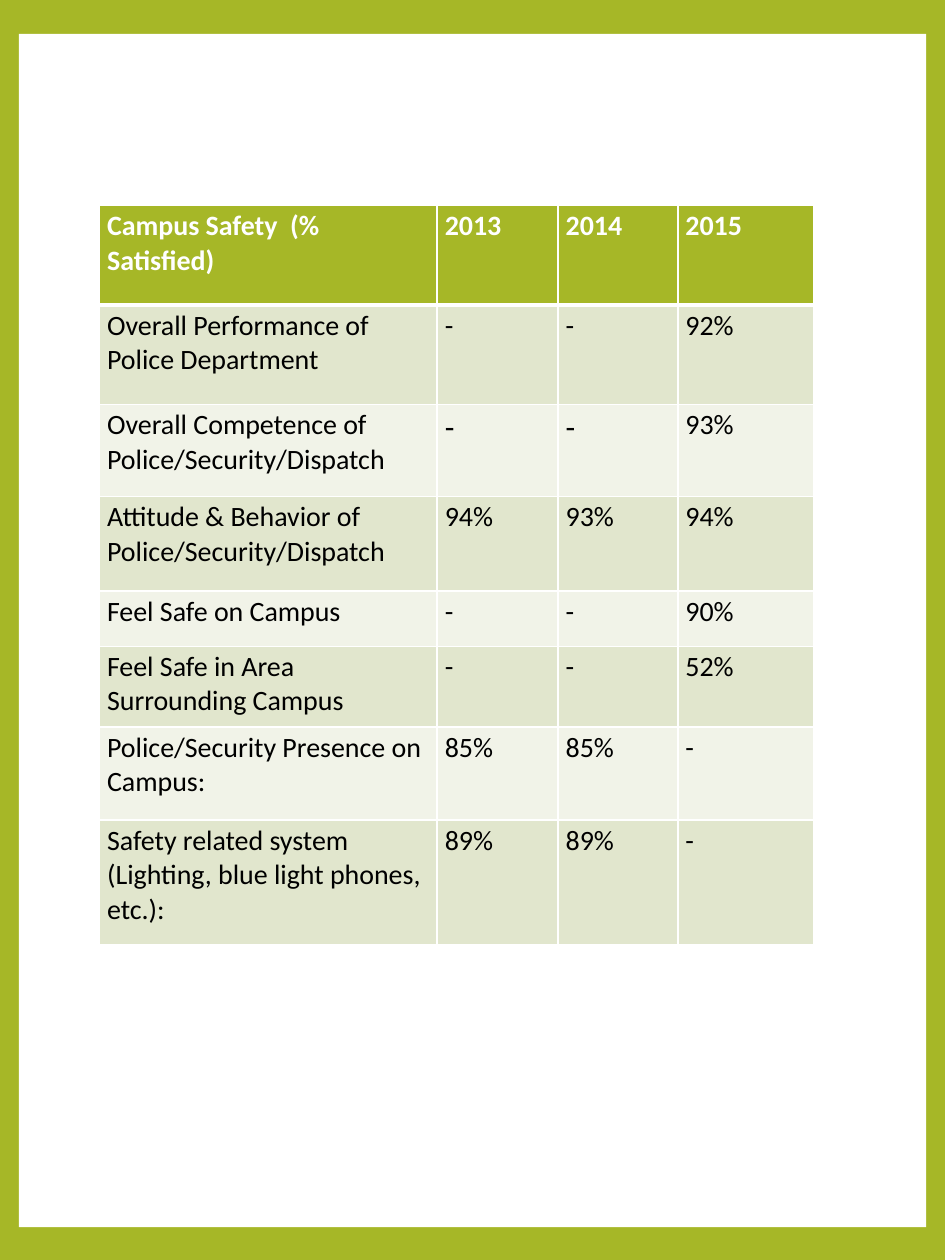
from lxml import etree
from pptx import Presentation
from pptx.dml.color import RGBColor
from pptx.enum.shapes import MSO_SHAPE
from pptx.oxml.ns import qn
from pptx.util import Inches, Pt

RECT = MSO_SHAPE.RECTANGLE
GREEN = RGBColor(0xA6, 0xB7, 0x27)
PALE = RGBColor(0xE1, 0xE6, 0xCD)
LIGHT = RGBColor(0xF1, 0xF3, 0xE8)
WHITE = RGBColor(0xFF, 0xFF, 0xFF)
BLACK = RGBColor(0x00, 0x00, 0x00)

COLS = [2.68, 0.96, 0.95, 1.08]
HIGHS = [0.79, 0.79, 0.73, 0.75, 0.44, 0.64, 0.74, 0.99]
ROWS = [
    ("Campus Safety  (% Satisfied)", "2013", "2014", "2015"),
    ("Overall Performance of Police Department", "-", "-", "92%"),
    ("Overall Competence of Police/Security/Dispatch", "-", "-", "93%"),
    ("Attitude & Behavior of Police/Security/Dispatch", "94%", "93%", "94%"),
    ("Feel Safe on Campus", "-", "-", "90%"),
    ("Feel Safe in Area Surrounding Campus", "-", "-", "52%"),
    ("Police/Security Presence on Campus:", "85%", "85%", "-"),
    ("Safety related system (Lighting, blue light phones, etc.):", "89%", "89%", "-"),
]
LARGE = {(2, 1), (2, 2)}


class Page:
    font = {"name": "Calibri", "size": Pt(16), "bold": False}
    inset = {
        "margin_left": Inches(0.06),
        "margin_right": Inches(0.06),
        "margin_top": Inches(0.03),
        "margin_bottom": Inches(0.03),
    }

    def __init__(self, slide):
        self.slide = slide

    def back(self, color):
        fill = self.slide.background.fill
        fill.solid()
        fill.fore_color.rgb = color

    def panel(self, box, color):
        shape = self.slide.shapes.add_shape(RECT, *map(Inches, box))
        shape.shadow.inherit = False
        shape.fill.solid()
        shape.fill.fore_color.rgb = color
        shape.line.fill.background()

    def edge(self, cell, side, width):
        props = cell._tc.get_or_add_tcPr()
        line = etree.SubElement(props, qn(f"a:ln{side}"), w=str(Pt(width)))
        solid = etree.SubElement(line, qn("a:solidFill"))
        etree.SubElement(solid, qn("a:srgbClr"), val=str(WHITE))

    def cell(self, cell, text, fill, color, **style):
        for key, value in self.inset.items():
            setattr(cell, key, value)
        cell.fill.solid()
        cell.fill.fore_color.rgb = fill
        cell.text = text
        font = cell.text_frame.paragraphs[0].runs[0].font
        for key, value in {**self.font, **style}.items():
            setattr(font, key, value)
        font.color.rgb = color

    def table(self, left, top, rows, cols, highs):
        size = Inches(sum(cols)), Inches(sum(highs))
        table = self.slide.shapes.add_table(
            len(rows), len(cols), Inches(left), Inches(top), *size
        ).table
        for col, width in zip(table.columns, cols):
            col.width = Inches(width)
        for row, high in zip(table.rows, highs):
            row.height = Inches(high)
        for r, row in enumerate(rows):
            head = r == 0
            fill = GREEN if head else PALE if r % 2 else LIGHT
            color = WHITE if head else BLACK
            edges = {"L": 1, "R": 1, "T": 3 if r == 1 else 1, "B": 3 if head else 1}
            for c, text in enumerate(row):
                cell = table.cell(r, c)
                for side, width in edges.items():
                    self.edge(cell, side, width)
                size = Pt(18) if (r, c) in LARGE else Pt(16)
                self.cell(cell, text, fill, color, bold=head, size=size)


def main():
    deck = Presentation()
    deck.slide_width = Inches(7.5)
    deck.slide_height = Inches(10)
    page = Page(deck.slides.add_slide(deck.slide_layouts[6]))
    page.back(GREEN)
    page.panel((0.15, 0.27, 7.2, 9.47), WHITE)
    page.table(0.79, 1.63, ROWS, COLS, HIGHS)
    deck.save("out.pptx")


if __name__ == "__main__":
    main()
